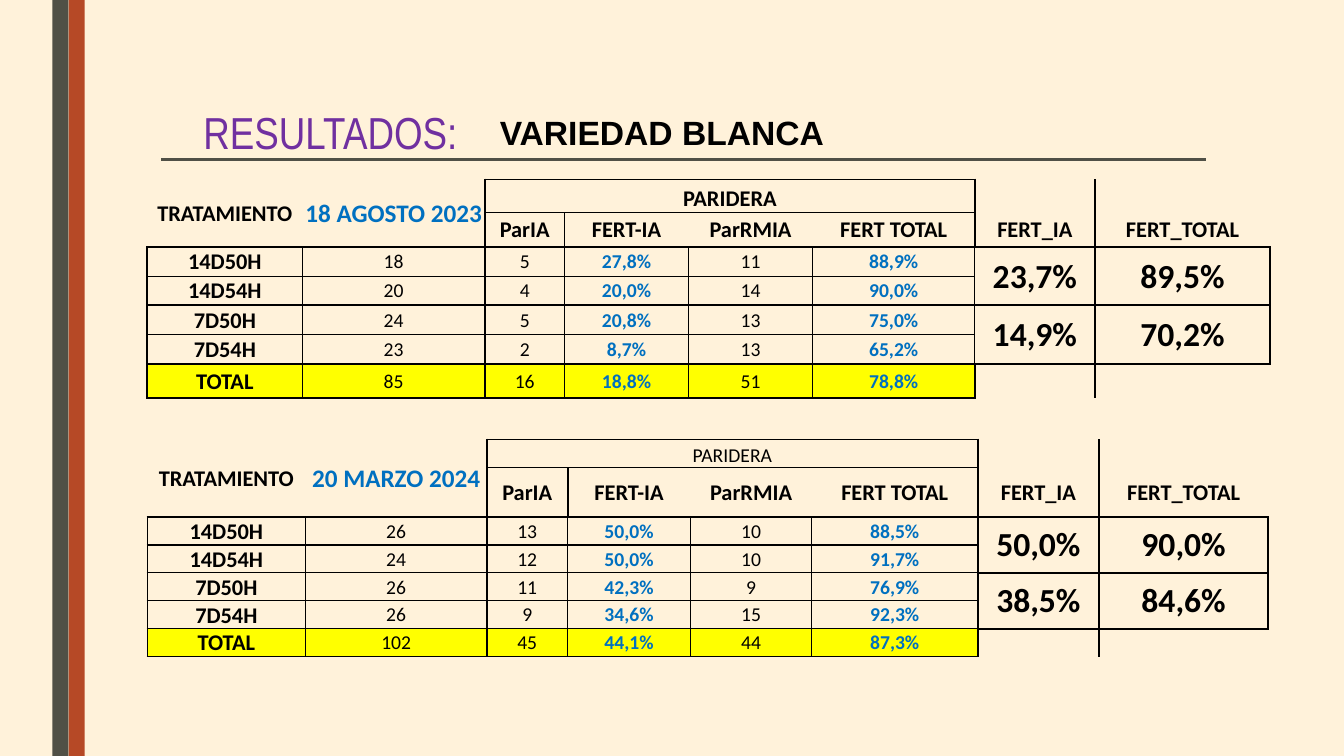
from lxml import etree
from pptx import Presentation
from pptx.dml.color import RGBColor
from pptx.enum.shapes import MSO_CONNECTOR, MSO_SHAPE
from pptx.enum.text import MSO_ANCHOR, PP_ALIGN
from pptx.oxml.ns import qn
from pptx.util import Inches, Pt

RECTANGLE, STRAIGHT = MSO_SHAPE.RECTANGLE, MSO_CONNECTOR.STRAIGHT
LEFT, CENTER = PP_ALIGN.LEFT, PP_ALIGN.CENTER
MIDDLE, BOTTOM = MSO_ANCHOR.MIDDLE, MSO_ANCHOR.BOTTOM
BLACK, BLUE, YELLOW, OLIVE = "000000", "0070C0", "FFFF00", "505046"
PLAIN_STYLE = "{2D5ABB26-0587-4C30-8999-92F81FD0307C}"
HEADER_ROWS, ROWS, GRID_COLUMNS, COLUMNS = 2, 7, 6, 8


def color(value):
    return RGBColor.from_string(value)


def write(frame, text, name, size, hue, bold=False, align=CENTER):
    frame.text = text
    para = frame.paragraphs[0]
    para.alignment = align
    for span in para.runs:
        span.font.name, span.font.size, span.font.bold = name, Pt(size), bold
        span.font.color.rgb = color(hue)


deck = Presentation()
deck.slide_width, deck.slide_height = Inches(13.33), Inches(7.5)
page = deck.slides.add_slide(deck.slide_layouts[6])
page.background.fill.solid()
page.background.fill.fore_color.rgb = color("FFF2DA")

stripe_width = 0.16
for left, hue in ((0.68, "B64926"), (0.52, OLIVE)):
    stripe = page.shapes.add_shape(RECTANGLE, Inches(left), 0, Inches(stripe_width), deck.slide_height)
    stripe.shadow.inherit = False
    stripe.fill.solid()
    stripe.fill.fore_color.rgb = color(hue)
    stripe.line.fill.background()

rule = page.shapes.add_connector(STRAIGHT, Inches(1.6), Inches(1.58), Inches(11.96), Inches(1.58))
rule.line.color.rgb = color(OLIVE)
rule.line.width = Pt(2.25)
etree.SubElement(rule._element.spPr, qn("a:effectLst"))

titles = (
    ((1.92, 0.99, 4.74, 0.64), "RESULTADOS:", "Arial Narrow", 32, "7030A0", False, LEFT),
    ((4.63, 1.06, 3.87, 0.5), "VARIEDAD BLANCA", "Arial", 24, BLACK, True, CENTER),
)
for place, *style in titles:
    box = page.shapes.add_textbox(*map(Inches, place))
    box.text_frame.word_wrap = True
    box.text_frame.vertical_anchor = MIDDLE
    write(box.text_frame, *style)

# Border rules: (line index, first cell, end cell, points); later rules win.
shared_across = [(0, 2, 6, 1.5), (1, 2, 6, 0.5)]
shared_across += [(line, 0, GRID_COLUMNS, 1) for line in range(HEADER_ROWS, ROWS + 1)]
shared_across += [(line, 6, 8, 1.5) for line in (2, 4, 6)] + [(7, 2, 6, 1.5)]
shared_down = [(line, HEADER_ROWS, ROWS, 1) for line in range(GRID_COLUMNS + 1)]
shared_down += [(line, 0, 2, 1.5) for line in (2, 6)]
shared_down += [(line, 2, 6, 1.5) for line in (7, 8)] + [(6, 6, 7, 1.5)]

headings = ["ParIA", "FERT-IA", "ParRMIA", "FERT TOTAL", "FERT_IA", "FERT_TOTAL"]
seasons = (
    {
        "date": "18 AGOSTO 2023", "top": 1.78, "height": 2.18, "group": (16, True),
        "widths": (1.54, 1.81, 0.79, 1.23, 1.23, 1.61, 1.19, 1.74),
        "heights": (0.33, 0.34, 0.29, 0.29, 0.29, 0.29, 0.34),
        "across": [(line, 0, GRID_COLUMNS, 1.5) for line in (2, 4, 6, 7)],
        "down": [(0, 2, 7, 1.5)],
        "body": [
            ["14D50H", "18", "5", "27,8%", "11", "88,9%", "23,7%", "89,5%"],
            ["14D54H", "20", "4", "20,0%", "14", "90,0%", "", ""],
            ["7D50H", "24", "5", "20,8%", "13", "75,0%", "14,9%", "70,2%"],
            ["7D54H", "23", "2", "8,7%", "13", "65,2%", "", ""],
            ["TOTAL", "85", "16", "18,8%", "51", "78,8%", "", ""],
        ],
    },
    {
        "date": "20 MARZO 2024", "top": 4.36, "height": 2.16, "group": (14, False),
        "widths": (1.57, 1.8, 0.8, 1.22, 1.2, 1.65, 1.2, 1.68),
        "heights": (0.28, 0.49, 0.24, 0.24, 0.24, 0.24, 0.23),
        "across": [],
        "down": [(line, 0, ROWS, 1.5) for line in (2, 6)],
        "body": [
            ["14D50H", "26", "13", "50,0%", "10", "88,5%", "50,0%", "90,0%"],
            ["14D54H", "24", "12", "50,0%", "10", "91,7%", "", ""],
            ["7D50H", "26", "11", "42,3%", "9", "76,9%", "38,5%", "84,6%"],
            ["7D54H", "26", "9", "34,6%", "15", "92,3%", "", ""],
            ["TOTAL", "102", "45", "44,1%", "44", "87,3%", "", ""],
        ],
    },
)

merges = [((0, 0), (1, 0)), ((0, 1), (1, 1)), ((0, 2), (0, 5))]
merges += [((row, column), (row + 1, column)) for row in (2, 4) for column in (6, 7)]
# Size, colour and weight of each body column
body_styles = [(16, BLACK, True)] + [(14, BLACK, False)] * 2 + [
    (14, BLUE, True), (14, BLACK, False), (14, BLUE, True)] + [(24, BLACK, True)] * 2

for season in seasons:
    table = page.shapes.add_table(ROWS, COLUMNS, Inches(1.46), Inches(season["top"]),
                                  Inches(11.13), Inches(season["height"])).table
    table.first_row = table.horz_banding = False
    table._tbl.tblPr.find(qn("a:tableStyleId")).text = PLAIN_STYLE
    for column, width in zip(table.columns, season["widths"]):
        column.width = Inches(width)
    for row, height in zip(table.rows, season["heights"]):
        row.height = Inches(height)
    for start, end in merges:
        table.cell(*start).merge(table.cell(*end))

    across = {(line, column): points
              for line, first, end, points in shared_across + season["across"]
              for column in range(first, end)}
    down = {(row, line): points
            for line, first, end, points in shared_down + season["down"]
            for row in range(first, end)}
    texts = [["TRATAMIENTO", season["date"], "PARIDERA"] + [""] * 5, ["", ""] + headings]
    texts += season["body"]

    for row in range(ROWS):
        for column in range(COLUMNS):
            cell, text = table.cell(row, column), texts[row][column]
            cell.margin_left = cell.margin_right = cell.margin_top = Inches(0.01)
            cell.margin_bottom = 0
            cell.vertical_anchor = BOTTOM if text == "PARIDERA" else MIDDLE

            if row >= HEADER_ROWS:
                size, hue, bold = body_styles[column]
            elif text == "PARIDERA":
                (size, bold), hue = season["group"], BLACK
            else:
                size, hue, bold = (18, BLUE, True) if text == season["date"] else (16, BLACK, True)
            if text:
                write(cell.text_frame, text, "Calibri", size, hue, bold)
            else:
                cell.text_frame.paragraphs[0]._p.get_or_add_endParaRPr().set("sz", "1400")

            edges = (("a:lnL", down.get((row, column))), ("a:lnR", down.get((row, column + 1))),
                     ("a:lnT", across.get((row, column))), ("a:lnB", across.get((row + 1, column))))
            for tag, points in edges:
                if points:
                    edge = etree.SubElement(cell._tc.get_or_add_tcPr(), qn(tag), w=str(Pt(points)))
                    paint = etree.SubElement(edge, qn("a:solidFill"))
                    etree.SubElement(paint, qn("a:srgbClr"), val=BLACK)

            if row == ROWS - 1 and column < GRID_COLUMNS:
                cell.fill.solid()
                cell.fill.fore_color.rgb = color(YELLOW)
            else:
                cell.fill.background()

deck.save("out.pptx")
